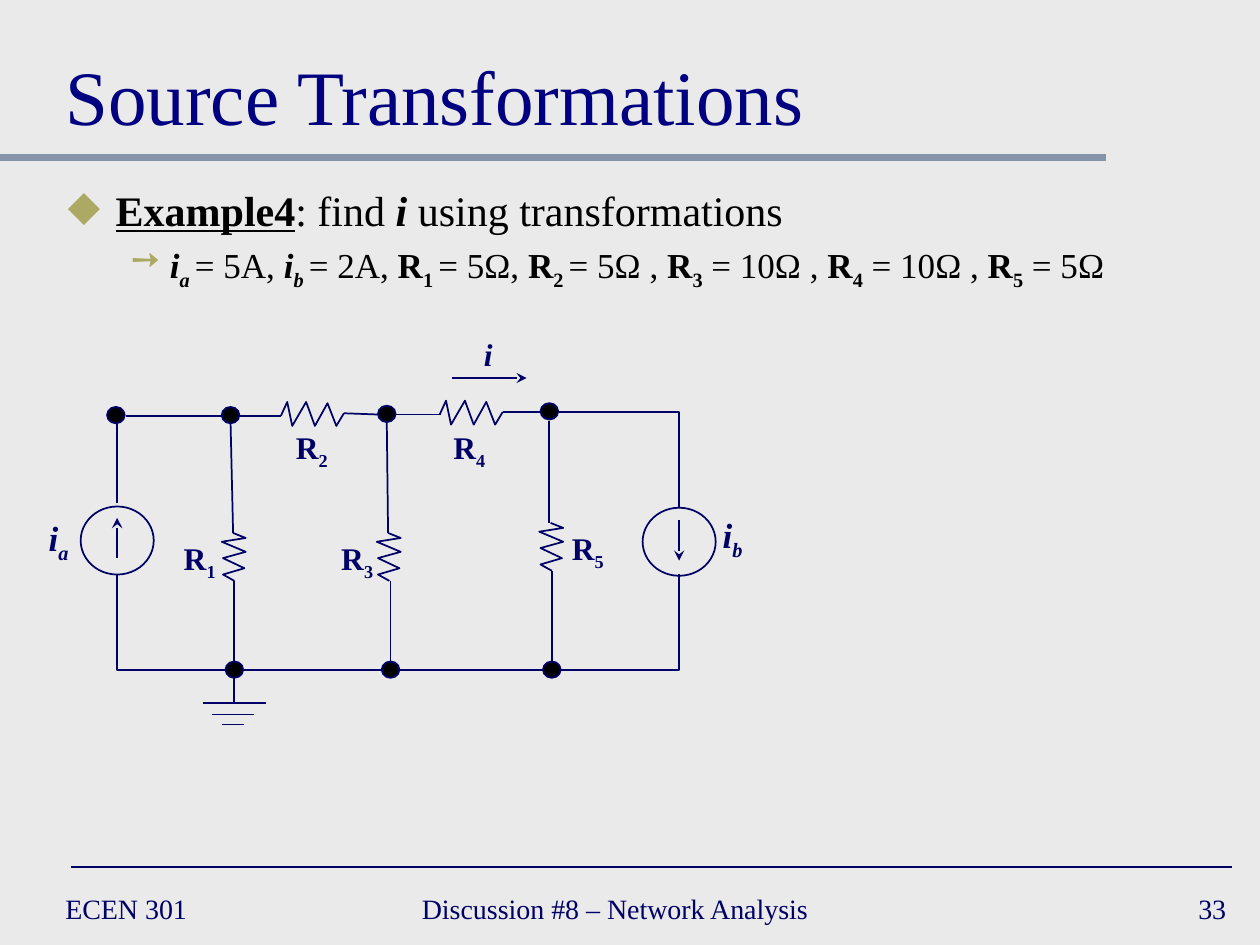
from typing import NamedTuple

from lxml.etree import SubElement
from pptx import Presentation
from pptx.dml.color import RGBColor
from pptx.enum.shapes import MSO_CONNECTOR as Connector, MSO_SHAPE as Shape
from pptx.enum.text import MSO_ANCHOR as Anchor, PP_ALIGN as Align
from pptx.oxml.ns import qn
from pptx.util import Emu, Pt

SCALE = 9144
FONT = "Times New Roman"
NAVY, TITLE_BLUE, BLACK, OLIVE = "000066", "000080", "000000", "ACA964"
BACKGROUND, RULE = "EAEAEA", "8495A9"
UPRIGHT_ZIGZAG = [(0, 0), (10, 4), (-9, 7), (10, 15), (-8, 20), (9, 28), (-8, 33), (1, 38)]
LEVEL_ZIGZAG = [(0, 0), (5, -11), (9, 8), (20, -11), (27, 8), (37, -10), (44, 8), (50, -2)]


class Piece(NamedTuple):
    text: str
    bold: bool = False
    italic: bool = False
    underline: bool = False
    subscript: bool = False


class Line(NamedTuple):
    x1: int
    y1: int
    x2: int
    y2: int
    color: str = NAVY
    width: float = 1
    arrow: bool = False


class Label(NamedTuple):
    left: int
    top: int
    width: int
    letter: str
    index: str = ""
    size: int = 18


class Resistor(NamedTuple):
    x: int
    y: int
    zigzag: list[tuple[int, int]]


class Bullet(NamedTuple):
    symbol: str
    margin: int
    indent: int
    size: int
    space_before: int
    pieces: list[Piece]


class Footer(NamedTuple):
    left: int
    width: int
    text: str
    align: Align = Align.LEFT


LINES = [
    Line(0, 125, 878, 125, RULE, 4), Line(56, 688, 978, 688),
    Line(100, 330, 176, 330), Line(190, 330, 223, 330), Line(273, 328, 300, 329),
    Line(314, 329, 350, 329), Line(399, 327, 429, 327),
    Line(93, 336, 93, 399), Line(183, 336, 185, 423), Line(307, 335, 308, 423),
    Line(436, 334, 436, 415),
    Line(186, 461, 186, 525), Line(310, 461, 310, 525), Line(438, 453, 438, 525),
    Line(193, 532, 303, 532), Line(317, 532, 431, 532),
    Line(186, 532, 186, 557), Line(161, 558, 211, 558), Line(168, 567, 202, 567),
    Line(176, 575, 194, 575),
    Line(93, 443, 93, 411, arrow=True), Line(539, 413, 539, 445, arrow=True),
    Line(359, 300, 418, 300, arrow=True),
]
CORNERS = [
    [(179, 532), (93, 532), (93, 456)],
    [(539, 456), (539, 532), (445, 532)],
    [(539, 403), (539, 327), (443, 327)],
]
RESISTORS = [
    Resistor(185, 423, UPRIGHT_ZIGZAG), Resistor(308, 423, UPRIGHT_ZIGZAG),
    Resistor(437, 415, UPRIGHT_ZIGZAG),
    Resistor(223, 330, LEVEL_ZIGZAG), Resistor(349, 329, LEVEL_ZIGZAG),
]
NODES = [(85, 323), (176, 323), (300, 322), (429, 320), (179, 525), (303, 525), (431, 525)]
SOURCES = [(64, 402), (510, 403)]
LABELS = [
    Label(28, 405, 37, "i", "a", 20), Label(563, 403, 37, "i", "b", 20),
    Label(135, 423, 47, "R", "1"), Label(224, 335, 47, "R", "2"), Label(260, 423, 47, "R", "3"),
    Label(349, 335, 47, "R", "4"), Label(443, 415, 47, "R", "5"), Label(374, 261, 27, "i"),
]
FOOTERS = [
    Footer(42, 217, "ECEN 301"),
    Footer(325, 383, "Discussion #8 – Network Analysis"),
    Footer(775, 208, "33", Align.RIGHT),
]
VALUES = [
    ("i", "a ", "= 5A, "), ("i", "b ", "= 2A, "), ("R", "1 ", "= 5Ω, "), ("R", "2 ", "= 5Ω , "),
    ("R", "3", " = 10Ω , "), ("R", "4", " = 10Ω , "), ("R", "5", " = 5Ω"),
]


def px(length: int) -> Emu:
    """Turn px into EMU."""
    return Emu(length * SCALE)


def rgb(color: str) -> RGBColor:
    """Turn a hex string into a colour."""
    return RGBColor.from_string(color)


def symbol_pieces(letter: str, index: str) -> list[Piece]:
    """Return a bold symbol with its subscript."""
    italic = letter == "i"
    pieces = [Piece(letter, True, italic)]
    return pieces + [Piece(index, True, italic, subscript=True)] if index else pieces


def write(paragraph, pieces: list[Piece], size: int, color: str) -> None:
    """Fill a paragraph with formatted runs."""
    for piece in pieces:
        run = paragraph.add_run()
        run.text = piece.text
        font = run.font
        font.name, font.size, font.color.rgb = FONT, Pt(size), rgb(color)
        font.bold, font.italic, font.underline = piece.bold, piece.italic, piece.underline
        if piece.subscript:
            font._element.set("baseline", "-25000")


def add_text_box(slide, left: int, top: int, width: int, height: int, wrap: bool):
    """Add a text box and return its text frame."""
    text_frame = slide.shapes.add_textbox(px(left), px(top), px(width), px(height)).text_frame
    text_frame.word_wrap = wrap
    return text_frame


def add_line(slide, line: Line) -> None:
    """Draw a straight line, with an arrowhead where wanted."""
    ends = [px(value) for value in line[:4]]
    connector = slide.shapes.add_connector(Connector.STRAIGHT, *ends)
    connector.line.color.rgb, connector.line.width = rgb(line.color), Pt(line.width)
    properties = connector._element.spPr
    if line.arrow:
        SubElement(properties.find(qn("a:ln")), qn("a:tailEnd"), type="stealth")
    SubElement(properties, qn("a:effectLst"))


def outline(shape, fill: str = "") -> None:
    """Give a shape a thin navy line and an optional fill."""
    shape.shadow.inherit = False
    shape.line.color.rgb, shape.line.width = rgb(NAVY), Pt(1)
    if fill:
        shape.fill.solid()
        shape.fill.fore_color.rgb = rgb(fill)
    else:
        shape.fill.background()


def add_polyline(slide, points: list[tuple[int, int]]) -> None:
    """Draw an open line through the points."""
    builder = slide.shapes.build_freeform(*points[0], scale=SCALE)
    builder.add_line_segments(points[1:], close=False)
    outline(builder.convert_to_shape())


def add_ellipse(slide, left: int, top: int, width: int, height: int, fill: str = "") -> None:
    """Draw a node or a current source."""
    outline(slide.shapes.add_shape(Shape.OVAL, px(left), px(top), px(width), px(height)), fill)


def add_bullet(paragraph, bullet: Bullet) -> None:
    """Write a bulleted paragraph."""
    properties = paragraph._p.get_or_add_pPr()
    properties.set("marL", str(px(bullet.margin)))
    properties.set("indent", str(px(bullet.indent)))
    paragraph.line_spacing = 0.9
    if bullet.space_before:
        paragraph.space_before = Pt(bullet.space_before)
    SubElement(SubElement(properties, qn("a:buClr")), qn("a:srgbClr"), val=OLIVE)
    SubElement(properties, qn("a:buChar"), char=bullet.symbol)
    write(paragraph, bullet.pieces, bullet.size, BLACK)


def add_title(slide, text: str) -> None:
    """Place and format the title."""
    title = slide.shapes.title
    title.left, title.top, title.width, title.height = px(42), px(17), px(917), px(100)
    title.text_frame.text = text
    title.text_frame.vertical_anchor = Anchor.BOTTOM
    paragraph = title.text_frame.paragraphs[0]
    paragraph.alignment = Align.LEFT
    font = paragraph.runs[0].font
    font.name, font.size, font.color.rgb = FONT, Pt(44), rgb(TITLE_BLUE)


def main() -> None:
    """Build the slide."""
    presentation = Presentation()
    presentation.slide_width, presentation.slide_height = px(1000), px(750)
    slide = presentation.slides.add_slide(presentation.slide_layouts[5])
    slide.background.fill.solid()
    slide.background.fill.fore_color.rgb = rgb(BACKGROUND)
    add_title(slide, "Source Transformations")

    task = [Piece("Example4", True, underline=True), Piece(": find "),
            Piece("i", True, True), Piece(" using transformations")]
    values = [piece for letter, index, value in VALUES
              for piece in symbol_pieces(letter, index) + [Piece(value)]]
    body = add_text_box(slide, 44, 146, 914, 121, True)
    add_bullet(body.paragraphs[0], Bullet("◆", 38, -38, 24, 0, task))
    add_bullet(body.add_paragraph(), Bullet("➙", 81, -31, 20, 5, values))

    for line in LINES:
        add_line(slide, line)
    for corner in CORNERS:
        add_polyline(slide, corner)
    for x, y, zigzag in RESISTORS:
        add_polyline(slide, [(x + dx, y + dy) for dx, dy in zigzag])
    for left, top in NODES:
        add_ellipse(slide, left, top, 14, 13, BLACK)
    for left, top in SOURCES:
        add_ellipse(slide, left, top, 58, 54)
    for label in LABELS:
        paragraph = add_text_box(slide, label.left, label.top, label.width, 40, False).paragraphs[0]
        paragraph.alignment = Align.CENTER
        write(paragraph, symbol_pieces(label.letter, label.index), label.size, NAVY)
    for footer in FOOTERS:
        text_frame = add_text_box(slide, footer.left, 700, footer.width, 42, True)
        text_frame.vertical_anchor = Anchor.MIDDLE
        text_frame.paragraphs[0].alignment = footer.align
        write(text_frame.paragraphs[0], [Piece(footer.text)], 16, NAVY)
    presentation.save("out.pptx")


if __name__ == "__main__":
    main()
